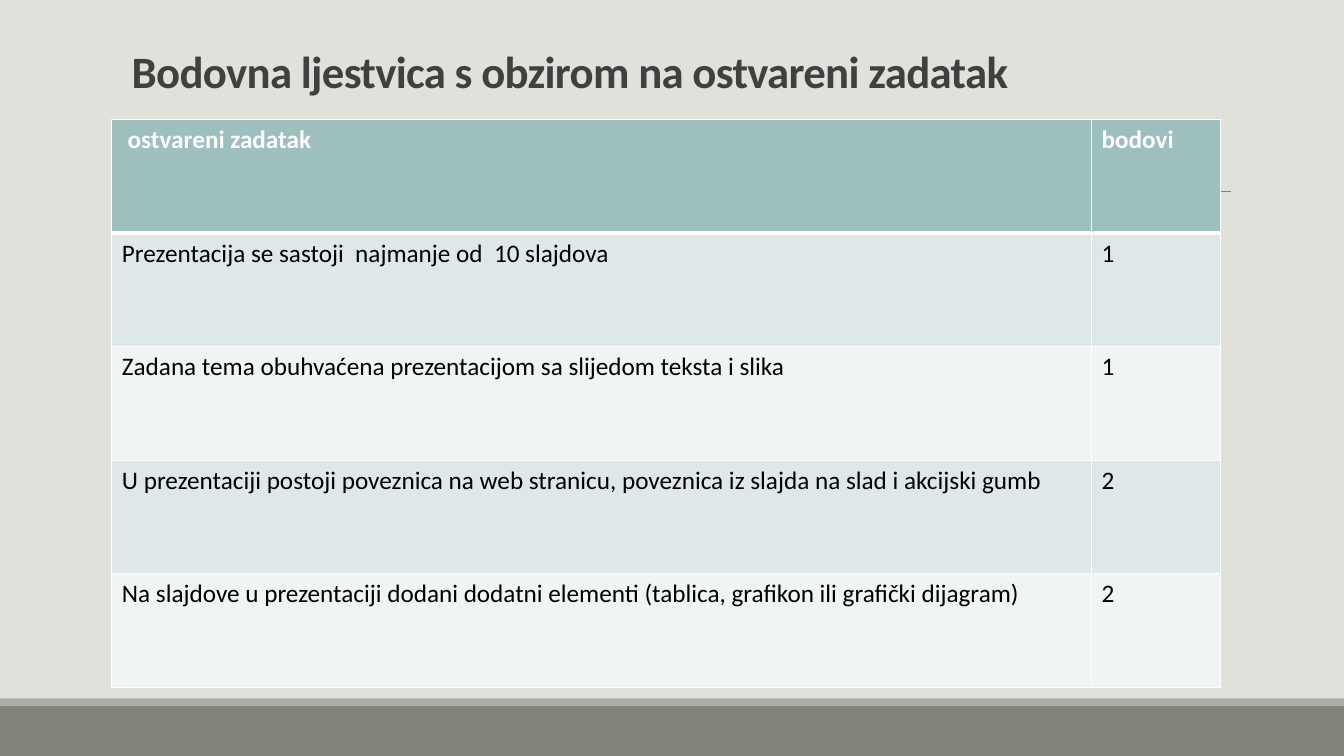
from lxml.etree import SubElement
from pptx import Presentation
from pptx.dml.color import RGBColor
from pptx.enum.shapes import MSO_CONNECTOR, MSO_SHAPE
from pptx.enum.text import MSO_ANCHOR
from pptx.oxml.ns import qn
from pptx.util import Cm, Pt

BACKGROUND = RGBColor(0xE1, 0xE1, 0xDB)
FOOTER = RGBColor(0x82, 0x84, 0x7C)
FOOTER_EDGE = RGBColor(0xAC, 0xAD, 0xA8)
RULE = RGBColor(0x80, 0x80, 0x80)
TITLE = RGBColor(0x40, 0x40, 0x40)
HEADER = RGBColor(0x9D, 0xBF, 0xBE)
ODD_ROW = RGBColor(0xDF, 0xE8, 0xE8)
EVEN_ROW = RGBColor(0xEF, 0xF4, 0xF4)
WHITE = RGBColor(0xFF, 0xFF, 0xFF)
BLACK = RGBColor(0x00, 0x00, 0x00)

FONT = "Calibri"
SLIDE_WIDTH = Cm(33.87)
SLIDE_HEIGHT = Cm(19.05)
COLUMN_WIDTHS = (Cm(24.69), Cm(3.25))
ROW_HEIGHT = Cm(2.86)
SCORES = (
    (" ostvareni zadatak", "bodovi"),
    ("Prezentacija se sastoji  najmanje od  10 slajdova", "1"),
    ("Zadana tema obuhvaćena prezentacijom sa slijedom teksta i slika", "1"),
    ("U prezentaciji postoji poveznica na web stranicu, poveznica iz slajda na slad i akcijski gumb", "2"),
    ("Na slajdove u prezentaciji dodani dodatni elementi (tablica, grafikon ili grafički dijagram)", "2"),
)


def add_band(slide, top, height, color):
    shape = slide.shapes.add_shape(MSO_SHAPE.RECTANGLE, 0, top, SLIDE_WIDTH, height)
    shape.shadow.inherit = False
    shape.fill.solid()
    shape.fill.fore_color.rgb = color
    shape.line.fill.background()


def add_rule(slide, left, right, top):
    connector = slide.shapes.add_connector(MSO_CONNECTOR.STRAIGHT, left, top, right, top)
    connector.line.color.rgb = RULE
    connector.line.width = Pt(0.5)
    SubElement(connector.element.spPr, qn("a:effectLst"))


def add_run(paragraph, text, size, color, bold):
    run = paragraph.add_run()
    run.text = text
    run.font.name = FONT
    run.font.size = Pt(size)
    run.font.color.rgb = color
    run.font.bold = bold
    return run


def add_title(slide, text):
    text_box = slide.shapes.add_textbox(Cm(3.07), Cm(0.2), Cm(27.94), Cm(2.39))
    frame = text_box.text_frame
    frame.word_wrap = True
    frame.vertical_anchor = MSO_ANCHOR.BOTTOM
    paragraph = frame.paragraphs[0]
    paragraph.line_spacing = 0.85
    run = add_run(paragraph, text, 32, TITLE, True)
    run.font._element.set("spc", "-50")


def set_borders(cell, top_width, bottom_width):
    properties = cell._tc.get_or_add_tcPr()
    widths = {"lnL": 1, "lnR": 1, "lnT": top_width, "lnB": bottom_width}
    for side, width in widths.items():
        border = SubElement(properties, qn(f"a:{side}"), w=str(Pt(width)))
        fill = SubElement(border, qn("a:solidFill"))
        SubElement(fill, qn("a:srgbClr"), val=str(WHITE))


def fill_cell(cell, text, row_index):
    is_header = row_index == 0
    set_borders(cell, 3 if row_index == 1 else 1, 3 if is_header else 1)
    cell.fill.solid()
    if is_header:
        cell.fill.fore_color.rgb = HEADER
    else:
        cell.fill.fore_color.rgb = ODD_ROW if row_index % 2 else EVEN_ROW
    color = WHITE if is_header else BLACK
    add_run(cell.text_frame.paragraphs[0], text, 18, color, is_header)


def add_score_table(slide):
    table = slide.shapes.add_table(
        len(SCORES), len(COLUMN_WIDTHS), Cm(2.82), Cm(3.02),
        sum(COLUMN_WIDTHS), ROW_HEIGHT * len(SCORES),
    ).table
    for column, width in zip(table.columns, COLUMN_WIDTHS):
        column.width = width
    for row_index, texts in enumerate(SCORES):
        table.rows[row_index].height = ROW_HEIGHT
        for column_index, text in enumerate(texts):
            fill_cell(table.cell(row_index, column_index), text, row_index)


def main():
    presentation = Presentation()
    presentation.slide_width = SLIDE_WIDTH
    presentation.slide_height = SLIDE_HEIGHT
    slide = presentation.slides.add_slide(presentation.slide_layouts[6])
    slide.background.fill.solid()
    slide.background.fill.fore_color.rgb = BACKGROUND
    add_band(slide, Cm(17.78), Cm(1.27), FOOTER)
    add_band(slide, Cm(17.6), Cm(0.18), FOOTER_EDGE)
    add_rule(slide, Cm(3.33), Cm(31.01), Cm(4.83))
    add_title(slide, "Bodovna ljestvica s obzirom na ostvareni zadatak")
    add_score_table(slide)
    presentation.save("out.pptx")


if __name__ == "__main__":
    main()
